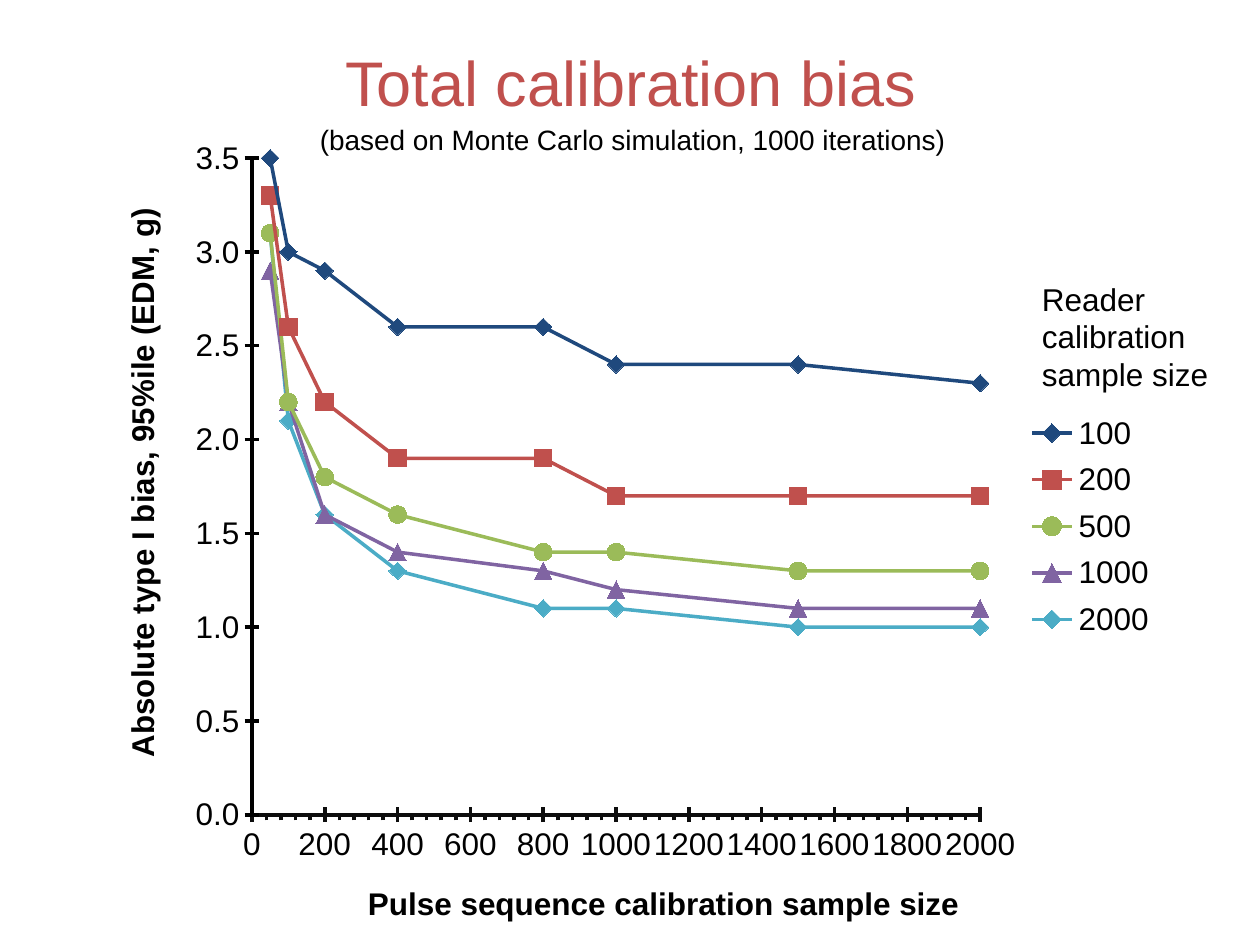
from lxml import etree
from pptx import Presentation
from pptx.chart.data import XyChartData
from pptx.dml.color import RGBColor
from pptx.enum.chart import (XL_CHART_TYPE, XL_LEGEND_POSITION, XL_MARKER_STYLE,
                             XL_TICK_LABEL_POSITION, XL_TICK_MARK)
from pptx.enum.text import MSO_ANCHOR, PP_ALIGN
from pptx.oxml.ns import qn
from pptx.util import Inches, Pt

SCATTER = XL_CHART_TYPE.XY_SCATTER_LINES
RIGHT = XL_LEGEND_POSITION.RIGHT
LOW = XL_TICK_LABEL_POSITION.LOW
CROSS, OUTSIDE, NO_TICK = XL_TICK_MARK.CROSS, XL_TICK_MARK.OUTSIDE, XL_TICK_MARK.NONE
DIAMOND, SQUARE = XL_MARKER_STYLE.DIAMOND, XL_MARKER_STYLE.SQUARE
CIRCLE, TRIANGLE = XL_MARKER_STYLE.CIRCLE, XL_MARKER_STYLE.TRIANGLE
CENTER, LEFT = PP_ALIGN.CENTER, PP_ALIGN.LEFT
MIDDLE, TOP = MSO_ANCHOR.MIDDLE, MSO_ANCHOR.TOP

WIDTH, HEIGHT = Inches(10), Inches(7.5)
FONT = "Arial"
COLORS = {"text": "000000", "x_axis": "0D0D0D", "navy": "1F497D", "red": "C0504D",
          "green": "9BBB59", "purple": "8064A2", "teal": "4BACC6"}

PULSE_SIZES = [50, 100, 200, 400, 800, 1000, 1500, 2000]
# Reader sample size, colour, marker, bias at each pulse sample size
READERS = [
    ("100", "navy", DIAMOND, [3.5, 3.0, 2.9, 2.6, 2.6, 2.4, 2.4, 2.3]),
    ("200", "red", SQUARE, [3.3, 2.6, 2.2, 1.9, 1.9, 1.7, 1.7, 1.7]),
    ("500", "green", CIRCLE, [3.1, 2.2, 1.8, 1.6, 1.4, 1.4, 1.3, 1.3]),
    ("1000", "purple", TRIANGLE, [2.9, 2.2, 1.6, 1.4, 1.3, 1.2, 1.1, 1.1]),
    ("2000", "teal", DIAMOND, [3.1, 2.1, 1.6, 1.3, 1.1, 1.1, 1.0, 1.0]),
]


def share(x, y, w, h):
    """Box in EMU from percentages of the slide's width and height."""
    return (int(WIDTH * x / 100), int(HEIGHT * y / 100),
            int(WIDTH * w / 100), int(HEIGHT * h / 100))


def rgb(name):
    return RGBColor.from_string(COLORS[name])


def style_font(font, size, color="text", bold=False):
    font.name, font.size, font.bold = FONT, Pt(size), bold
    font.color.rgb = rgb(color)


def add_label(slide, box, text, size, color="text", align=LEFT, anchor=TOP, wrap=True):
    tf = slide.shapes.add_textbox(*box).text_frame
    tf.word_wrap, tf.vertical_anchor = wrap, anchor
    p = tf.paragraphs[0]
    p.text, p.alignment = text, align
    style_font(p.runs[0].font, size, color)


def set_layout(parent, index, inner=False, **shares):
    """Place a chart part by shares (x, y, w, h) of the chart's box."""
    for old in parent.findall(qn("c:layout")):
        parent.remove(old)
    layout = etree.Element(qn("c:layout"))
    parent.insert(index, layout)
    manual = etree.SubElement(layout, qn("c:manualLayout"))
    if inner:
        etree.SubElement(manual, qn("c:layoutTarget")).set("val", "inner")
    for key in ("x", "y"):
        etree.SubElement(manual, qn(f"c:{key}Mode")).set("val", "edge")
    for key, value in shares.items():
        etree.SubElement(manual, qn(f"c:{key}")).set("val", str(value))


def style_axis(axis, title, color, maximum, step, number_format, title_at):
    axis.has_major_gridlines = axis.has_minor_gridlines = False
    axis.minimum_scale, axis.maximum_scale, axis.major_unit = 0, maximum, step
    axis.major_tick_mark, axis.minor_tick_mark = CROSS, NO_TICK
    axis.tick_label_position = LOW
    axis.format.line.color.rgb = rgb(color)
    axis.format.line.width = Pt(2)
    labels = axis.tick_labels
    labels.number_format, labels.number_format_is_linked = number_format, False
    style_font(labels.font, 18)
    tf = axis.axis_title.text_frame
    tf.text = title
    style_font(tf.paragraphs[0].runs[0].font, 18, bold=True)
    x, y = title_at
    set_layout(axis.axis_title._element, 1, x=x, y=y)


def add_bias_chart(slide, box):
    data = XyChartData()
    for name, _, _, biases in READERS:
        s = data.add_series(name)
        for size, bias in zip(PULSE_SIZES, biases):
            s.add_data_point(size, bias)
    chart = slide.shapes.add_chart(SCATTER, *box, data).chart
    chart.has_title = False
    style_font(chart.font, 10)
    chart.plots[0].vary_by_categories = False
    set_layout(chart._chartSpace.chart.plotArea, 0, inner=True,
               x=0.147, y=0.028, w=0.68, h=0.833)

    # Axes
    style_axis(chart.category_axis, "Pulse sequence calibration sample size",
               "x_axis", 2000, 200, "0", (0.25, 0.94))
    chart.category_axis.minor_unit = 40
    chart.category_axis.minor_tick_mark = OUTSIDE
    style_axis(chart.value_axis, "Absolute type I bias, 95%ile (EDM, g)",
               "text", 3.5, 0.5, "#,##0.0", (0.02, 0.09))

    # Lines and markers
    for s, (_, color, marker, _) in zip(chart.plots[0].series, READERS):
        s.smooth = False
        s.format.line.color.rgb = rgb(color)
        s.format.line.width = Pt(2)
        s.marker.style, s.marker.size = marker, 10
        s.marker.format.fill.solid()
        s.marker.format.fill.fore_color.rgb = rgb(color)
        s.marker.format.line.color.rgb = rgb(color)

    # Legend
    chart.has_legend = True
    legend = chart.legend
    legend.position, legend.include_in_layout = RIGHT, False
    style_font(legend.font, 18)
    set_layout(legend._element, 1, x=0.86, y=0.34, w=0.14, h=0.31)


def add_heading(slide, title_box, note_box):
    add_label(slide, title_box, "Total calibration bias", 36, "red", CENTER, MIDDLE)
    add_label(slide, note_box, "(based on Monte Carlo simulation, 1000 iterations)",
              16, wrap=False)


def main():
    prs = Presentation()
    prs.slide_width, prs.slide_height = WIDTH, HEIGHT
    slide = prs.slides.add_slide(prs.slide_layouts[6])
    add_label(slide, share(81.7, 28.93, 15.8, 13.47), "Reader calibration sample size", 18)
    add_bias_chart(slide, share(7.5, 14.4, 85, 84.13))
    add_heading(slide, share(1.7, 0.27, 96.7, 16.67), share(24.4, 12.27, 52.3, 4.93))
    prs.save("out.pptx")


if __name__ == "__main__":
    main()
